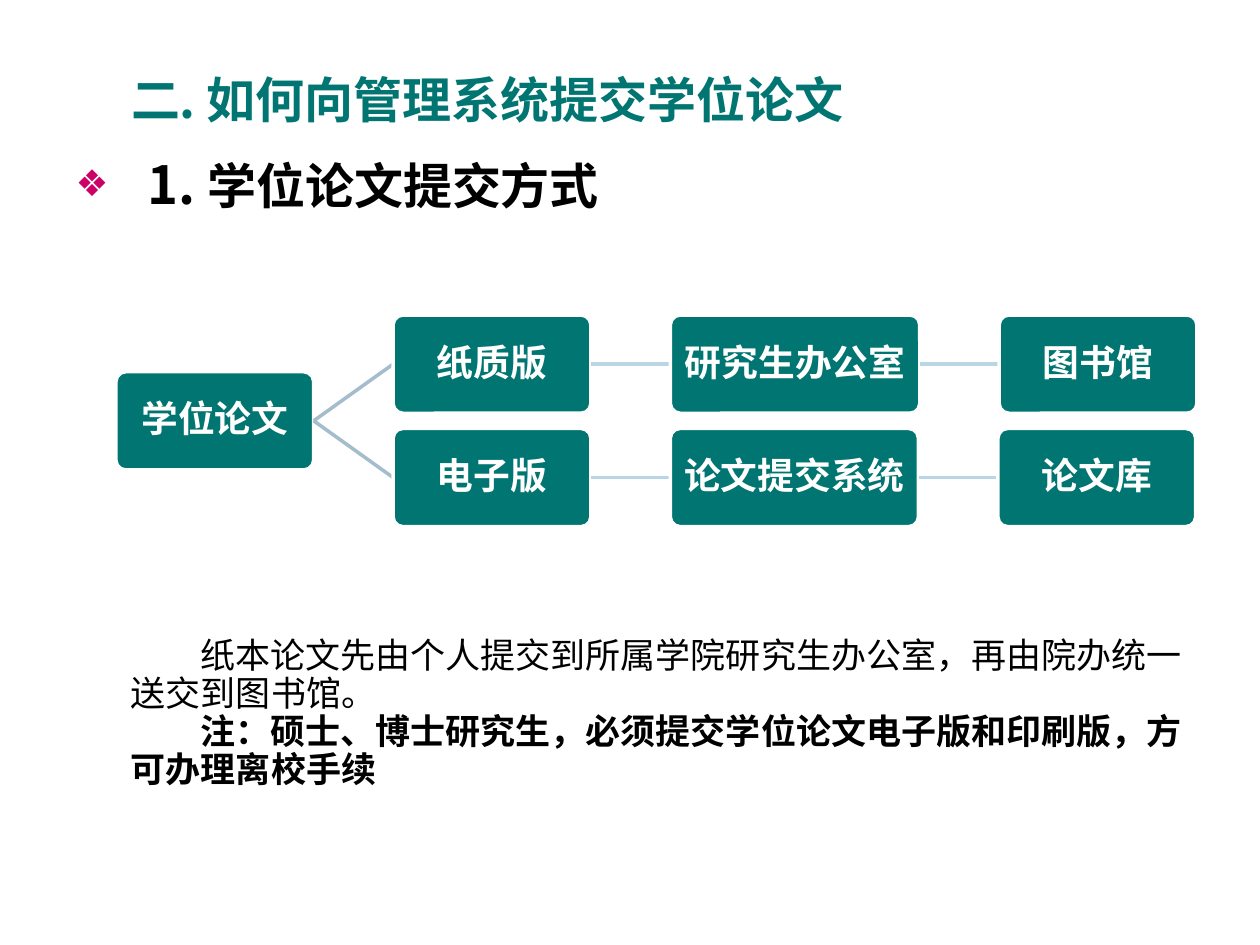
from lxml.etree import SubElement
from pptx import Presentation
from pptx.dml.color import RGBColor
from pptx.enum.shapes import MSO_CONNECTOR as Connector, MSO_SHAPE as Shape
from pptx.enum.text import MSO_ANCHOR as Anchor, MSO_AUTO_SIZE as AutoSize, PP_ALIGN as Align
from pptx.oxml.ns import qn
from pptx.util import Inches, Pt

COLORS = {
    "teal": "007572",
    "black": "000000",
    "white": "FFFFFF",
    "bullet": "CC0066",
    "branch": "A3BDCC",
    "link": "B9D6E7",
}


def color(name):
    return RGBColor.from_string(COLORS[name])


def style(paragraph, size, color_name, bold=False, font="Arial"):
    paragraph.font.name = font
    paragraph.font.size = Pt(size)
    paragraph.font.bold = bold
    paragraph.font.color.rgb = color(color_name)


prs = Presentation()
prs.slide_width, prs.slide_height = Inches(10), Inches(7.5)
slide = prs.slides.add_slide(prs.slide_layouts[1])
shapes = slide.shapes

# Title
title = shapes.title
title.left, title.top = Inches(0.94), Inches(0.16)
title.width, title.height = Inches(8.34), Inches(1.25)
title.text_frame.text = "二. 如何向管理系统提交学位论文"
title.text_frame.auto_size = AutoSize.NONE
title.text_frame.vertical_anchor = Anchor.MIDDLE
title_line = title.text_frame.paragraphs[0]
title_line.alignment = Align.LEFT
style(title_line, 28, "teal", True, "Noto Sans CJK SC")

# Section heading with a diamond bullet
heading = slide.placeholders[1]
heading.left, heading.top = Inches(0.5), Inches(0.86)
heading.width, heading.height = Inches(9), Inches(1.25)
heading.text_frame.auto_size = AutoSize.NONE
heading.text_frame.vertical_anchor = Anchor.MIDDLE
heading_line = heading.text_frame.paragraphs[0]
heading_line.line_spacing = 0.9
heading_line.space_before = Pt(0)
bullet = heading_line._p.get_or_add_pPr()
bullet.set("marL", str(Inches(0.57)))
bullet.set("indent", str(-Inches(0.57)))
SubElement(SubElement(bullet, qn("a:buClr")), qn("a:srgbClr"), val=COLORS["bullet"])
SubElement(bullet, qn("a:buSzPct"), val="70000")
SubElement(bullet, qn("a:buFont"), typeface="Arial")
SubElement(bullet, qn("a:buChar"), char="❖")
style(heading_line, 28, "black", True, "Noto Sans CJK SC")
number = heading_line.add_run()
number.text = "1. "
number.font.size = Pt(30)
heading_line.add_run().text = "学位论文提交方式"

# Submission flow: one root, two routes
BOX_WIDTH, BOX_HEIGHT, GAP = 1.57, 0.78, 0.63
ROOT_LEFT, ROOT_TOP = 0.92, 2.95
routes = [
    (2.5, [("纸质版", BOX_WIDTH), ("研究生办公室", 1.98), ("图书馆", BOX_WIDTH)]),
    (3.4, [("电子版", BOX_WIDTH), ("论文提交系统", 1.97), ("论文库", BOX_WIDTH)]),
]
steps = [("学位论文", ROOT_LEFT, ROOT_TOP, BOX_WIDTH, None)]
for top, stops in routes:
    left, previous = ROOT_LEFT + BOX_WIDTH + GAP, "学位论文"
    for label, width in stops:
        steps.append((label, left, top, width, previous))
        left, previous = left + width + GAP, label

boxes = {}
for label, left, top, width, previous in steps:
    # The link lies beneath the box it leads to
    link = None
    if previous:
        link = shapes.add_connector(Connector.STRAIGHT, 0, 0, 0, 0)
        link.line.color.rgb = color("branch" if previous == "学位论文" else "link")
        link.line.width = Pt(2)
        SubElement(link._element.spPr, qn("a:effectLst"))

    box = shapes.add_shape(Shape.ROUNDED_RECTANGLE, Inches(left), Inches(top),
                           Inches(width), Inches(BOX_HEIGHT))
    box.adjustments[0] = 0.1
    box.shadow.inherit = False
    box.fill.solid()
    box.fill.fore_color.rgb = color("teal")
    box.line.color.rgb = color("white")
    box.line.width = Pt(2)
    frame = box.text_frame
    frame.margin_left = frame.margin_right = Inches(0.01)
    frame.margin_top = frame.margin_bottom = Inches(0.01)
    frame.vertical_anchor = Anchor.MIDDLE
    frame.text = label
    caption = frame.paragraphs[0]
    caption.alignment = Align.CENTER
    caption.line_spacing = 0.9
    style(caption, 21, "white", True)
    boxes[label] = box

    if link is not None:
        link.begin_connect(boxes[previous], 3)
        link.end_connect(box, 1)

# Explanation and note
note = shapes.add_textbox(Inches(0.94), Inches(5.02), Inches(8.56), Inches(1.31)).text_frame
note.word_wrap = True
note.text = ("纸本论文先由个人提交到所属学院研究生办公室，再由院办统一送交到图书馆。\n"
             "注：硕士、博士研究生，必须提交学位论文电子版和印刷版，方可办理离校手续")
for paragraph, bold in zip(note.paragraphs, (False, True)):
    paragraph.line_spacing = 0.9
    paragraph._p.get_or_add_pPr().set("indent", str(Inches(0.55)))
    style(paragraph, 20, "black", bold)

prs.save("out.pptx")
